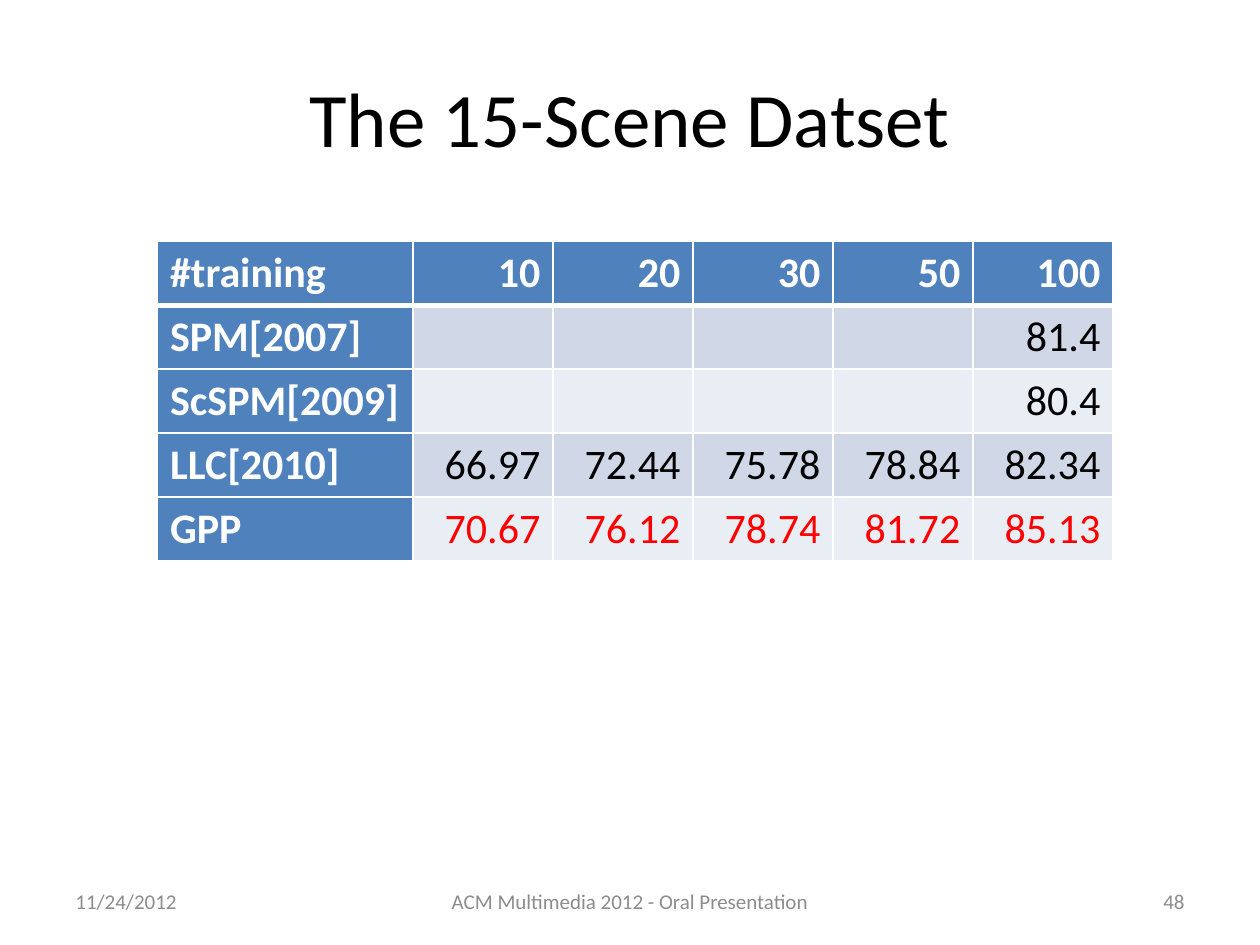
import pptx
import pptx.util
import pptx.dml.color
import pptx.enum.text
import pptx.oxml
import pptx.oxml.ns

Pt = pptx.util.Pt
ALIGN = pptx.enum.text.PP_ALIGN
MIDDLE = pptx.enum.text.MSO_ANCHOR.MIDDLE

COLORS = {"black": "000000", "white": "FFFFFF", "red": "FF0000", "gray": "8C8C8C",
          "blue": "4F81BD", "odd": "D0D8E8", "even": "E9EDF4"}

TEXTS = [
    ("The 15-Scene Datset", (36, 21.6, 648, 90), 44, "black", ALIGN.CENTER),
    ("11/24/2012", (36, 500.5, 168, 28.75), 12, "gray", ALIGN.LEFT),
    ("ACM Multimedia 2012 - Oral Presentation", (246, 500.5, 228, 28.75), 12, "gray", ALIGN.CENTER),
    ("48", (516, 500.5, 168, 28.75), 12, "gray", ALIGN.RIGHT),
]

ROWS = [
    ("#training", "10", "20", "30", "50", "100"),
    ("SPM[2007]", "", "", "", "", "81.4"),
    ("ScSPM[2009]", "", "", "", "", "80.4"),
    ("LLC[2010]", "66.97", "72.44", "75.78", "78.84", "82.34"),
    ("GPP", "70.67", "76.12", "78.74", "81.72", "85.13"),
]
LEFT, TOP, HIGH = 90, 138, 36.5
WIDTHS = [146] + [80] * 5


def tint(name):
    return pptx.dml.color.RGBColor.from_string(COLORS[name])


def write(frame, text, size, color, align, bold=False):
    para = frame.paragraphs[0]
    para.alignment = align
    run = para.add_run()
    run.text = text
    for key, value in {"name": "Calibri", "size": Pt(size), "bold": bold}.items():
        setattr(run.font, key, value)
    run.font.color.rgb = tint(color)


def border(cell, row):
    props = cell._tc.get_or_add_tcPr()
    thick = {(0, "B"), (1, "T")}
    for side in "LRTB":
        width = Pt(3 if (row, side) in thick else 1)
        props.append(pptx.oxml.parse_xml(
            f'<a:ln{side} {pptx.oxml.ns.nsdecls("a")} w="{width}"><a:solidFill>'
            f'<a:srgbClr val="{COLORS["white"]}"/></a:solidFill></a:ln{side}>'))


def add_text(slide, text, box, size, color, align):
    frame = slide.shapes.add_textbox(*map(Pt, box)).text_frame
    for key, value in {"word_wrap": True, "vertical_anchor": MIDDLE}.items():
        setattr(frame, key, value)
    write(frame, text, size, color, align)


def add_scores(slide):
    box = (LEFT, TOP, sum(WIDTHS), HIGH * len(ROWS))
    table = slide.shapes.add_table(len(ROWS), len(WIDTHS), *map(Pt, box)).table
    table.first_col = True
    for col, width in zip(table.columns, WIDTHS):
        col.width = Pt(width)
    for r, row in enumerate(ROWS):
        table.rows[r].height = Pt(HIGH)
        for c, text in enumerate(row):
            cell = table.cell(r, c)
            head = r == 0 or c == 0
            border(cell, r)
            cell.fill.solid()
            cell.fill.fore_color.rgb = tint("blue" if head else "odd" if r % 2 else "even")
            if text:
                color = "white" if head else "red" if row[0] == "GPP" else "black"
                write(cell.text_frame, text, 24, color, ALIGN.RIGHT if c else ALIGN.LEFT, head)


def main():
    deck = pptx.Presentation()
    deck.slide_width, deck.slide_height = Pt(720), Pt(540)
    slide = deck.slides.add_slide(deck.slide_layouts[6])
    for item in TEXTS:
        add_text(slide, *item)
    add_scores(slide)
    deck.save("out.pptx")


if __name__ == "__main__":
    main()
